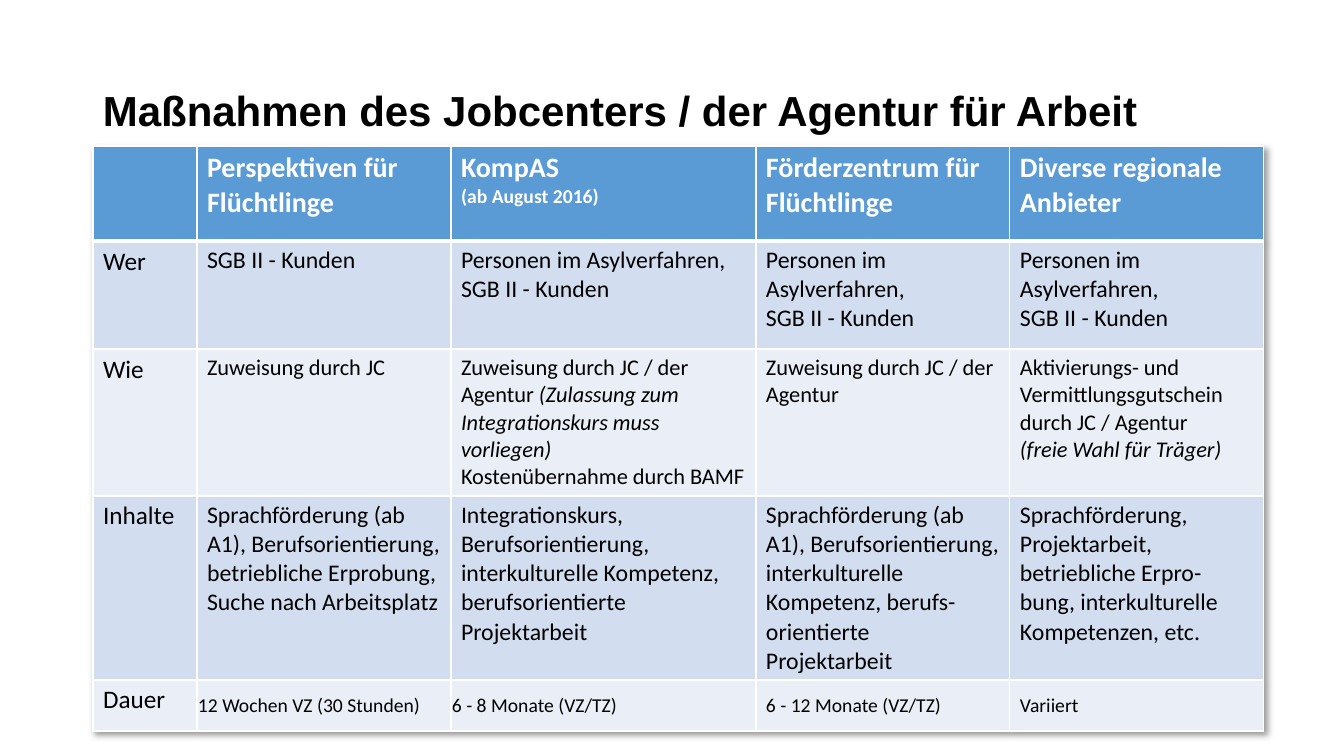
from lxml.etree import SubElement
from pptx import Presentation
from pptx.dml.color import RGBColor
from pptx.enum.text import MSO_ANCHOR
from pptx.oxml import parse_xml
from pptx.oxml.ns import nsdecls, qn
from pptx.util import Emu, Pt

TITLE = "Maßnahmen des Jobcenters / der Agentur für Arbeit"
COLORS = {"header": "5B9BD5", "odd": "D2DEEF", "even": "EAEFF7",
          "white": "FFFFFF", "black": "000000"}
PERSONS = ["Personen im Asylverfahren,", "SGB II - Kunden"]

# ITALIC_START
ROWS = [
    [[""], ["Perspektiven für Flüchtlinge"], ["KompAS", "(ab August 2016)"],
     ["Förderzentrum für Flüchtlinge"], ["Diverse regionale Anbieter"]],
    [["Wer"], ["SGB II - Kunden"], PERSONS, PERSONS, PERSONS],
    [["Wie"], ["Zuweisung durch JC"],
     [("Zuweisung durch JC / der Agentur ",
       "(Zulassung zum Integrationskurs muss vorliegen)"),
      "Kostenübernahme durch BAMF"],
     ["Zuweisung durch JC / der Agentur"],
     ["Aktivierungs- und Vermittlungsgutschein durch JC / Agentur",
      ("", "(freie Wahl für Träger)")]],
    [["Inhalte"],
     ["Sprachförderung (ab A1), Berufsorientierung, betriebliche Erprobung, "
      "Suche nach Arbeitsplatz"],
     ["Integrationskurs, Berufsorientierung, interkulturelle Kompetenz, "
      "berufsorientierte Projektarbeit"],
     ["Sprachförderung (ab A1), Berufsorientierung, interkulturelle Kompetenz, "
      "berufs-orientierte Projektarbeit"],
     ["Sprachförderung, Projektarbeit, betriebliche Erpro-bung, "
      "interkulturelle Kompetenzen, etc."]],
    [["Dauer"], ["12 Wochen VZ (30 Stunden)"], ["6 - 8 Monate (VZ/TZ)"],
     ["6 - 12 Monate (VZ/TZ)"], ["Variiert"]],
]
ROW_SIZES = [20, 17, 16, 17, 14]
LABEL_SIZE, NOTE_SIZE = 18, 14
COLUMN_WIDTHS = [104, 254, 305, 254, 254]
ROW_HEIGHTS = [95, 108, 147, 184, 51]
TITLE_BOX = (93, 40, 1159, 146)
TABLE_LEFT, TABLE_TOP = 93, 146
DURATION_ROW, TIGHT_COLUMNS = 4, (1, 2)


def px(value):
    return Emu(round(value * 914400 / 100.8))


def style_run(run, font_name, size, color, bold=False, italic=False):
    font = run.font
    font.name, font.size = font_name, Pt(size)
    font.bold, font.italic = bold, italic
    font.color.rgb = RGBColor.from_string(COLORS[color])


def add_borders(cell, row):
    properties = cell._tc.get_or_add_tcPr()
    widths = {"lnL": 1, "lnR": 1, "lnT": 3 if row == 1 else 1,
              "lnB": 3 if row == 0 else 1}
    for side, width in widths.items():
        line = SubElement(properties, qn(f"a:{side}"), w=str(Pt(width)))
        fill = SubElement(line, qn("a:solidFill"))
        SubElement(fill, qn("a:srgbClr"), val=COLORS["white"])


def fill_cell(cell, paragraphs, row, column):
    header = row == 0
    add_borders(cell, row)
    cell.fill.solid()
    band = "header" if header else "odd" if row % 2 else "even"
    cell.fill.fore_color.rgb = RGBColor.from_string(COLORS[band])
    if row == DURATION_ROW and column:
        cell.vertical_anchor = MSO_ANCHOR.MIDDLE
        if column in TIGHT_COLUMNS:
            cell.margin_left = cell.margin_right = cell.margin_top = px(1)
            cell.margin_bottom = 0
    for index, content in enumerate(paragraphs):
        plain, italic = content if isinstance(content, tuple) else (content, "")
        frame = cell.text_frame
        paragraph = frame.add_paragraph() if index else frame.paragraphs[0]
        size = LABEL_SIZE if column == 0 else ROW_SIZES[row]
        if header and index:
            size = NOTE_SIZE
        for text, slanted in ((plain, False), (italic, True)):
            if text:
                run = paragraph.add_run()
                run.text = text
                style_run(run, "Calibri", size, "white" if header else "black",
                          header, slanted)


def add_title(slide):
    frame = slide.shapes.add_textbox(*map(px, TITLE_BOX)).text_frame
    frame.word_wrap = True
    frame.vertical_anchor = MSO_ANCHOR.MIDDLE
    frame.text = TITLE
    paragraph = frame.paragraphs[0]
    paragraph.line_spacing = 0.9
    style_run(paragraph.runs[0], "Arial", 30, "black", bold=True)


def add_measures(slide):
    table = slide.shapes.add_table(
        len(ROWS), len(COLUMN_WIDTHS), px(TABLE_LEFT), px(TABLE_TOP),
        px(sum(COLUMN_WIDTHS)), px(sum(ROW_HEIGHTS))).table
    for column, width in zip(table.columns, COLUMN_WIDTHS):
        column.width = px(width)
    for row, height in zip(table.rows, ROW_HEIGHTS):
        row.height = px(height)
    for row, cells in enumerate(ROWS):
        for column, paragraphs in enumerate(cells):
            fill_cell(table.cell(row, column), paragraphs, row, column)
    table._tbl.tblPr.insert(0, parse_xml(
        f'<a:effectLst {nsdecls("a")}>'
        '<a:outerShdw blurRad="50800" dist="38100" dir="2700000" algn="tl" rotWithShape="0">'
        f'<a:srgbClr val="{COLORS["black"]}"><a:alpha val="40000"/></a:srgbClr>'
        '</a:outerShdw></a:effectLst>'))


def main():
    presentation = Presentation()
    presentation.slide_width, presentation.slide_height = px(1344), px(756)
    slide = presentation.slides.add_slide(presentation.slide_layouts[6])
    add_title(slide)
    add_measures(slide)
    presentation.save("out.pptx")


if __name__ == "__main__":
    main()
